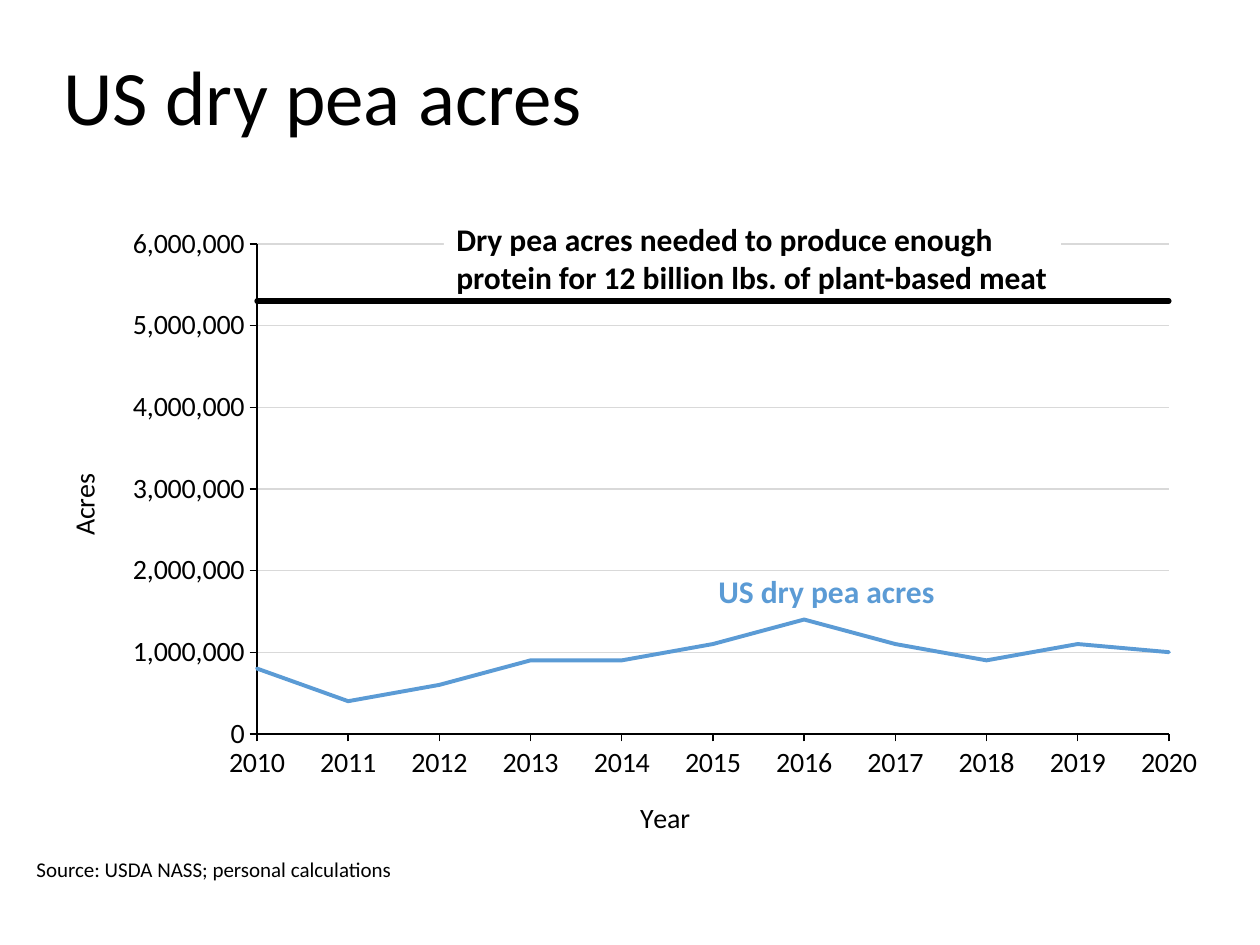
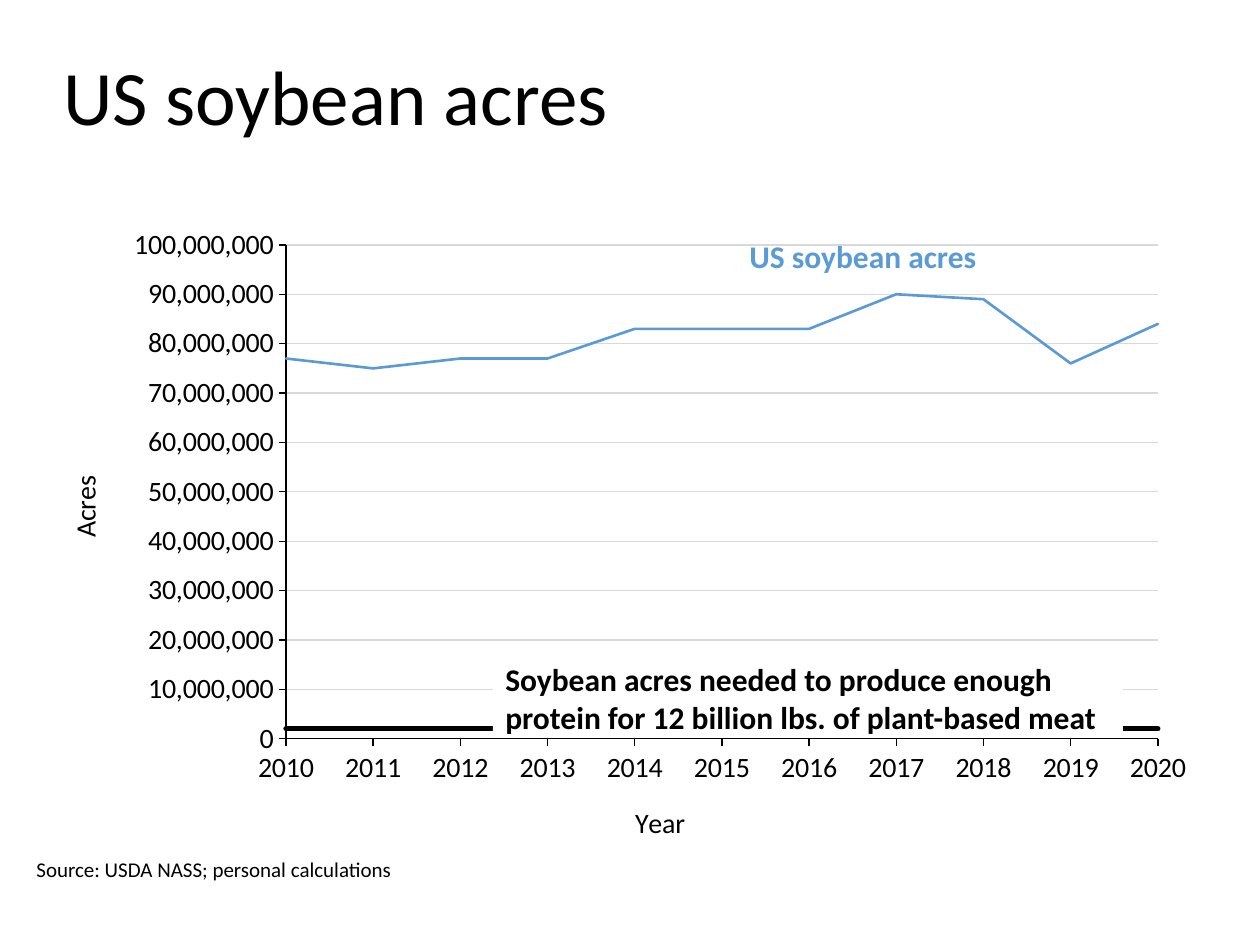
"""Build two slides comparing US crop acres with the acres needed for plant-based meat."""
from dataclasses import dataclass

from lxml.etree import SubElement
from pptx import Presentation
from pptx.chart.data import XyChartData
from pptx.dml.color import RGBColor
from pptx.enum.chart import XL_CHART_TYPE, XL_TICK_MARK
from pptx.enum.text import MSO_ANCHOR
from pptx.oxml import parse_xml
from pptx.oxml.ns import nsdecls, qn
from pptx.util import Emu, Pt


@dataclass(frozen=True)
class Theme:
    font: str = "Calibri"
    ink: RGBColor = RGBColor(0x00, 0x00, 0x00)
    paper: RGBColor = RGBColor(0xFF, 0xFF, 0xFF)
    grid: RGBColor = RGBColor(0xD9, 0xD9, 0xD9)
    actual: RGBColor = RGBColor(0x5B, 0x9B, 0xD5)
    title_size: int = 44
    label_size: int = 18
    axis_size: int = 16
    source_size: int = 12
    thin: float = 0.75
    needed_width: float = 3


THEME = Theme()
SCALE = 914400 / 126
YEARS = range(2010, 2021)

CROPS = [
    dict(
        title="US dry pea acres",
        needed_label="Dry pea acres needed to produce enough protein for 12 billion lbs. of plant-based meat",
        acres=[800000, 400000, 600000, 900000, 900000, 1100000,
               1400000, 1100000, 900000, 1100000, 1000000],
        needed=5300000, top=6000000, step=1000000, line_width=2.25,
        chart_box=(37, 214, 1184, 651), plot_box=(257, 244, 912, 490),
        year_at=(635, 794), acres_at=(60, 469),
        actual_box=(706, 566, 252, 126), needed_box=(444, 214, 617, 81),
    ),
    dict(
        title="US soybean acres",
        needed_label="Soybean acres needed to produce enough protein for 12 billion lbs. of plant-based meat",
        acres=[77000000, 75000000, 77000000, 77000000, 83000000, 83000000,
               83000000, 90000000, 89000000, 76000000, 84000000],
        needed=2000000, top=100000000, step=10000000, line_width=1.5,
        chart_box=(38, 215, 1172, 656), plot_box=(286, 245, 872, 494),
        year_at=(630, 799), acres_at=(61, 471),
        actual_box=(737, 231, 252, 126), needed_box=(493, 654, 630, 81),
    ),
]


def add_text(page, text, bounds, size, color=THEME.ink, bold=False, wrap=True,
             anchor=MSO_ANCHOR.TOP, spacing=None, fill=None):
    box = page.shapes.add_textbox(*(Emu(round(length * SCALE)) for length in bounds))
    box.text_frame.word_wrap = wrap
    box.text_frame.vertical_anchor = anchor
    if fill is not None:
        box.fill.solid()
        box.fill.fore_color.rgb = fill
    para = box.text_frame.paragraphs[0]
    para.line_spacing = spacing
    span = para.add_run()
    span.text = text
    span.font.name, span.font.size, span.font.bold = THEME.font, Pt(size), bold
    span.font.color.rgb = color


def place_in_chart(parent, index, bounds, chart_box):
    for old_layout in parent.findall(qn("c:layout")):
        parent.remove(old_layout)
    layout = parse_xml(f"<c:layout {nsdecls('c')}><c:manualLayout/></c:layout>")
    manual = layout[0]
    left, top, width, height = chart_box
    fractions = [(bounds[0] - left) / width, (bounds[1] - top) / height]
    settings = [("xMode", "edge"), ("yMode", "edge")]
    if len(bounds) == 4:
        settings.insert(0, ("layoutTarget", "inner"))
        fractions += [bounds[2] / width, bounds[3] / height]
    settings += zip("xywh", (f"{fraction:.4f}" for fraction in fractions))
    for name, value in settings:
        SubElement(manual, qn(f"c:{name}")).set("val", value)
    parent.insert(index, layout)


deck = Presentation()
deck.slide_width, deck.slide_height = Emu(round(1260 * SCALE)), Emu(round(945 * SCALE))

for crop in CROPS:
    page = deck.slides.add_slide(deck.slide_layouts[6])
    add_text(page, crop["title"], (51, 9, 1159, 183), THEME.title_size,
             anchor=MSO_ANCHOR.MIDDLE, spacing=0.9)

    data = XyChartData(number_format="General")
    for name, values in ((crop["title"], crop["acres"]),
                         ("Acres needed", [crop["needed"]] * len(YEARS))):
        series = data.add_series(name)
        for year, value in zip(YEARS, values):
            series.add_data_point(year, value)
    chart = page.shapes.add_chart(
        XL_CHART_TYPE.XY_SCATTER_LINES_NO_MARKERS,
        *(Emu(round(length * SCALE)) for length in crop["chart_box"]), data).chart
    chart.has_title = chart.has_legend = False
    chart.font.name, chart.font.size = THEME.font, Pt(THEME.axis_size)
    chart.font.color.rgb = THEME.ink
    chart.plots[0].vary_by_categories = False

    for series, color, width in zip(chart.plots[0].series, (THEME.actual, THEME.ink),
                                    (crop["line_width"], THEME.needed_width)):
        series.smooth = False
        series.format.line.color.rgb = color
        series.format.line.width = Pt(width)
    for line in chart.element.xpath(".//c:ser/c:spPr/a:ln"):
        line.set("cap", "rnd")

    year_axis, acre_axis = chart.category_axis, chart.value_axis
    for axis, title, low, high, step, number_format in (
            (year_axis, "Year", YEARS[0], YEARS[-1], 1, "General"),
            (acre_axis, "Acres", 0, crop["top"], crop["step"], "#,##0")):
        axis.minimum_scale, axis.maximum_scale, axis.major_unit = low, high, step
        axis.major_tick_mark, axis.minor_tick_mark = XL_TICK_MARK.OUTSIDE, XL_TICK_MARK.NONE
        axis.format.line.color.rgb = THEME.ink
        axis.format.line.width = Pt(THEME.thin)
        axis.tick_labels.number_format = number_format
        axis.tick_labels.number_format_is_linked = False
        span = axis.axis_title.text_frame.paragraphs[0].add_run()
        span.text = title
        span.font.name, span.font.size, span.font.bold = THEME.font, Pt(THEME.axis_size), False
        span.font.color.rgb = THEME.ink
    year_axis.has_major_gridlines = False
    acre_axis.has_major_gridlines = True
    acre_axis.major_gridlines.format.line.color.rgb = THEME.grid
    acre_axis.major_gridlines.format.line.width = Pt(THEME.thin)

    year_title, acre_title = chart.element.xpath(".//c:valAx/c:title")
    acre_body = acre_title.xpath("./c:tx/c:rich/a:bodyPr")[0]
    acre_body.set("rot", "-5400000")
    acre_body.set("vert", "horz")
    plot_area = chart.element.xpath(".//c:plotArea")[0]
    for parent, index, bounds in ((plot_area, 0, crop["plot_box"]),
                                  (year_title, 1, crop["year_at"]),
                                  (acre_title, 1, crop["acres_at"])):
        place_in_chart(parent, index, bounds, crop["chart_box"])

    add_text(page, crop["title"], crop["actual_box"], THEME.label_size,
             color=THEME.actual, bold=True)
    add_text(page, crop["needed_label"], crop["needed_box"], THEME.label_size,
             bold=True, fill=THEME.paper)
    add_text(page, "Source: USDA NASS; personal calculations", (24, 850, 384, 38),
             THEME.source_size, wrap=False)

deck.save("out.pptx")
